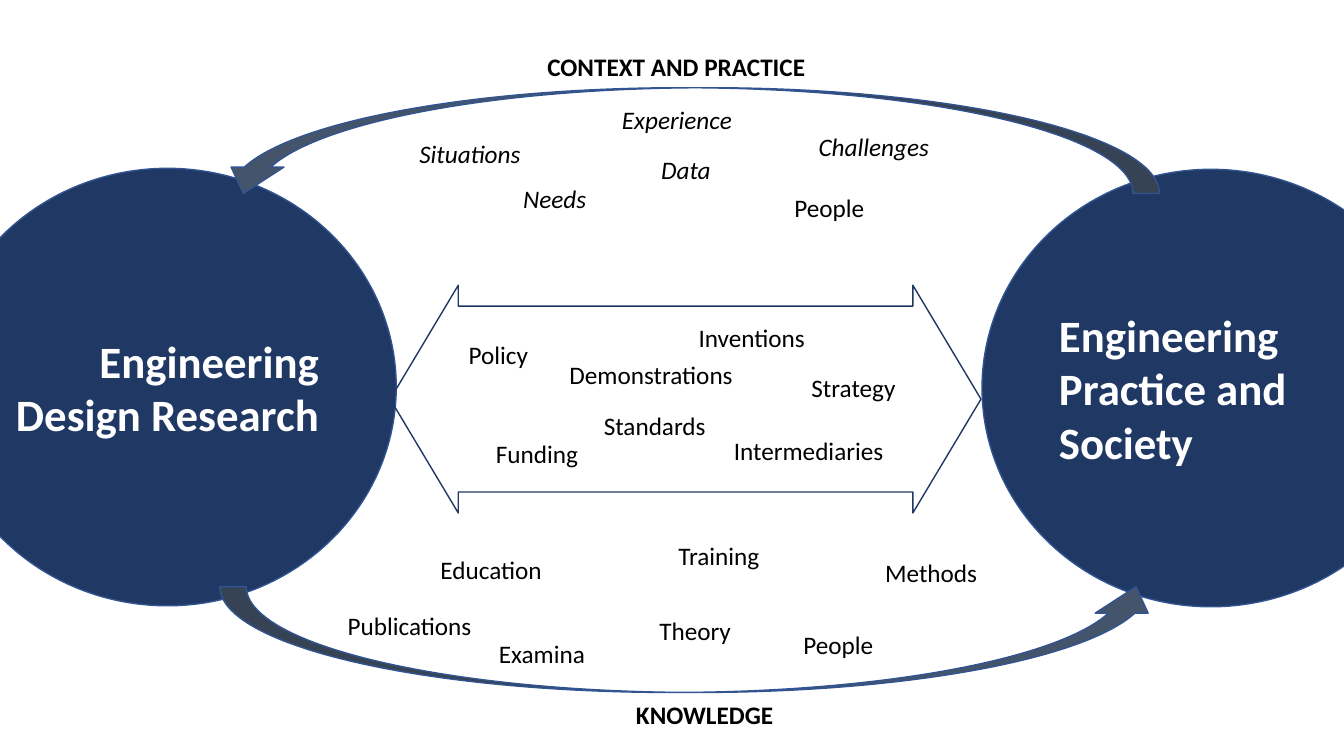
"""Build the slide on exchange between design research and engineering practice."""
from pptx import Presentation
from pptx.dml.color import RGBColor
from pptx.enum.shapes import MSO_SHAPE as Preset
from pptx.enum.text import MSO_ANCHOR as Anchor, MSO_AUTO_SIZE as AutoSize, PP_ALIGN as Align
from pptx.oxml.ns import qn
from pptx.util import Inches, Pt

COLORS = {"navy": "203864", "outline": "325491", "slate": "44546A", "white": "FFFFFF", "black": "000000"}
DIAMETER_X, DIAMETER_Y = 4.54, 4.34
ARC_WIDTH, ARC_HEIGHT = 9.35, 1.05
LABEL_HEIGHT = 0.4
UNWRAPPED = {"Situations", "Data", "Experience", "Needs"}


def add_preset(shapes, preset, box, fill, line):
    """Add a preset shape with flat fill and a thin outline."""
    shape = shapes.add_shape(preset, *map(Inches, box))
    shape.shadow.inherit = False
    if fill:
        shape.fill.solid()
        shape.fill.fore_color.rgb = RGBColor.from_string(COLORS[fill])
    else:
        shape.fill.background()
    shape.line.color.rgb = RGBColor.from_string(COLORS[line])
    shape.line.width = Pt(1)
    return shape


def write(paragraph, text, size, color, **styles):
    """Fill a paragraph with one formatted run."""
    paragraph.text = text
    font = paragraph.runs[0].font
    for name, value in {"name": "Calibri", "size": Pt(size), **styles}.items():
        setattr(font, name, value)
    font.color.rgb = RGBColor.from_string(COLORS[color])


presentation = Presentation()
presentation.slide_width = Inches(13.33)
presentation.slide_height = Inches(7.5)
slide = presentation.slides.add_slide(presentation.slide_layouts[6])

circles = [
    (-0.61, 1.67, Align.RIGHT, ["Engineering Design Research"]),
    (9.74, 1.68, Align.LEFT, ["Engineering Practice and", "Society"]),
]
for left, top, alignment, lines in circles:
    circle = add_preset(slide.shapes, Preset.OVAL, (left, top, DIAMETER_X, DIAMETER_Y), "navy", "outline")
    frame = circle.text_frame
    frame.word_wrap = True
    frame.vertical_anchor = Anchor.MIDDLE
    for index, line in enumerate(lines):
        paragraph = frame.add_paragraph() if index else frame.paragraphs[0]
        paragraph.alignment = alignment
        write(paragraph, line, 32, "white", bold=True)

plain, italic, bold = {}, {"italic": True}, {"bold": True}
practice_labels = [
    ("Situations", 4.06, 1.32, 1.22, italic),
    ("Data", 6.46, 1.48, 0.7, italic),
    ("Experience", 6.07, 0.99, 1.33, italic),
    ("Challenges", 8.02, 1.25, 1.59, italic),
    ("CONTEXT AND PRACTICE", 5.33, 0.46, 3.21, bold),
    ("Needs", 5.09, 1.77, 0.83, italic),
    ("People", 7.78, 1.86, 2, plain),
]
knowledge_labels = [
    ("Publications", 3.35, 6.01, 1.6, plain),
    ("Education", 4.27, 5.45, 1.35, plain),
    ("Theory", 6.44, 6.06, 1.02, plain),
    ("Training", 6.63, 5.31, 2.47, plain),
    ("Methods", 8.68, 5.48, 1.41, plain),
    ("KNOWLEDGE", 6.21, 6.89, 2.14, bold),
    ("People", 7.87, 6.19, 2, plain),
    ("Examina", 4.85, 6.28, 2, plain),
]
exchange_labels = [
    ("Funding", 4.82, 4.3, 1.09, plain),
    ("Policy", 4.55, 3.32, 0.88, plain),
    ("Intermediaries", 7.18, 4.27, 2, plain),
    ("Inventions", 6.83, 3.15, 1.79, plain),
    ("Demonstrations", 5.55, 3.52, 2, plain),
    ("Standards", 5.89, 4.02, 2, plain),
    ("Strategy", 7.95, 3.64, 1.14, plain),
]
flows = [
    (Preset.CURVED_DOWN_ARROW, (2.15, 0.87, ARC_WIDTH, ARC_HEIGHT), "slate", "outline", "flipH", [], practice_labels),
    (Preset.CURVED_DOWN_ARROW, (2.18, 5.82, ARC_WIDTH, ARC_HEIGHT), "slate", "outline", "flipV", [], knowledge_labels),
    (Preset.LEFT_RIGHT_ARROW, (3.87, 2.83, 5.86, 2.26), None, "navy", None, [0.816, 0.299], exchange_labels),
]
for preset, box, fill, line, flip, adjustments, labels in flows:
    group = slide.shapes.add_group_shape()
    arrow = add_preset(group.shapes, preset, box, fill, line)
    for index, value in enumerate(adjustments):
        arrow.adjustments[index] = value
    if flip:
        arrow._element.spPr.find(qn("a:xfrm")).set(flip, "1")
    for text, left, top, width, styles in labels:
        label = group.shapes.add_textbox(*map(Inches, (left, top, width, LABEL_HEIGHT)))
        frame = label.text_frame
        frame.word_wrap = text not in UNWRAPPED
        frame.auto_size = AutoSize.SHAPE_TO_FIT_TEXT
        write(frame.paragraphs[0], text, 18, "black", **styles)

presentation.save("out.pptx")
